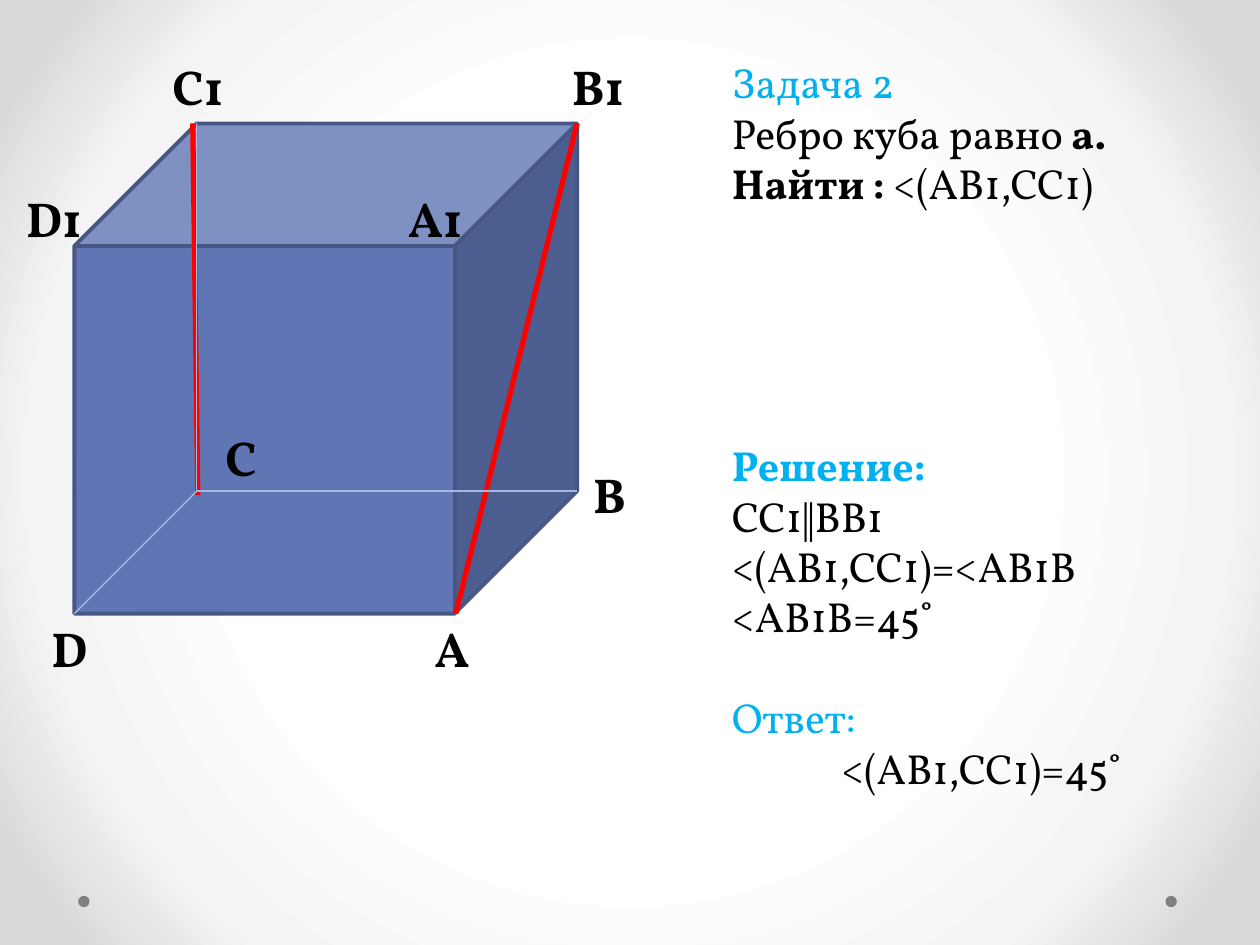
from dataclasses import dataclass

from lxml import etree
from pptx import Presentation
from pptx.dml.color import RGBColor
from pptx.enum import shapes, text
from pptx.oxml import ns
from pptx.util import Inches, Pt


@dataclass(frozen=True)
class Theme:
    font: str = "Vollkorn"
    label: int = 28
    body: int = 24
    ink: str = "000000"
    heading: str = "00B0F0"
    cube: str = "6076B4"
    edge: str = "475785"
    hidden: str = "A0BAE1"
    accent: str = "FF0000"
    dot: str = "808080"
    glow: tuple = ((50, "FFFFFF"), (76, "F4F4F4"), (92, "DADADA"))


T = Theme()


def add_xml(parent, tag, **attrs):
    return etree.SubElement(parent, ns.qn(tag), {k: str(v) for k, v in attrs.items()})


def paint_background(s):
    """Radial glow from the slide centre."""
    fill = s.background.fill
    fill.gradient()
    grad = s.background._cSld.find(".//" + ns.qn("a:gradFill"))
    for child in list(grad):
        grad.remove(child)
    stops = add_xml(grad, "a:gsLst")
    for pos, color in T.glow:
        add_xml(add_xml(stops, "a:gs", pos=pos * 1000), "a:srgbClr", val=color)
    centre = add_xml(grad, "a:path", path="circle")
    add_xml(centre, "a:fillToRect", **dict.fromkeys("ltrb", 50000))


def add_solid(s, kind, x, y, w, h, fill, edge=None):
    sp = s.shapes.add_shape(kind, Inches(x), Inches(y), Inches(w), Inches(h))
    sp.shadow.inherit = False
    sp.fill.solid()
    sp.fill.fore_color.rgb = RGBColor.from_string(fill)
    if edge:
        sp.line.color.rgb = RGBColor.from_string(edge)
        sp.line.width = Pt(2.25)
    else:
        sp.line.fill.background()


def add_line(s, start, end, color, width):
    ends = [Inches(v) for v in (*start, *end)]
    line = s.shapes.add_connector(shapes.MSO_CONNECTOR.STRAIGHT, *ends)
    line.line.color.rgb = RGBColor.from_string(color)
    line.line.width = Pt(width)
    add_xml(line._element.spPr, "a:effectLst")


def add_text(s, box, paragraphs, size):
    """Each paragraph is a list of (text, color, bold) runs."""
    sp = s.shapes.add_textbox(*(Inches(v) for v in box))
    tf = sp.text_frame
    tf.word_wrap = True
    tf.auto_size = text.MSO_AUTO_SIZE.SHAPE_TO_FIT_TEXT
    for i, runs in enumerate(paragraphs):
        p = tf.add_paragraph() if i else tf.paragraphs[0]
        for words, color, bold in runs:
            r = p.add_run()
            r.text = words
            for name, value in dict(name=T.font, size=Pt(size), bold=bold).items():
                setattr(r.font, name, value)
            r.font.color.rgb = RGBColor.from_string(color)
    return tf


def draw_cube(s, x, y, w, h):
    """Cube with vertex labels, hidden edges and the two lines in question."""
    depth = h / 4
    back_x, right, bottom = x + depth, x + w, y + h
    front_right, back_bottom = right - depth, bottom - depth
    back_corner = (back_x, back_bottom)

    add_solid(s, shapes.MSO_SHAPE.CUBE, x, y, w, h, T.cube, T.edge)

    low, mid, high = bottom - 0.01, y + 0.47, y - 0.58
    labels = {
        "A": (3.35, low, 0.55), "A1": (3.14, mid, 0.9),
        "B": (4.61, 3.64, 0.47), "B1": (4.44, high, 0.81),
        "C": (1.69, 3.34, 0.55), "C1": (1.27, high, 0.68),
        "D": (0.31, low, 0.55), "D1": (0.11, mid, 0.75),
    }
    for name, (left, top, width) in labels.items():
        add_text(s, (left, top, width, 0.57), [[(name, T.ink, True)]], T.label)

    add_line(s, (right, y), (front_right + 0.01, bottom), T.accent, 3)
    add_line(s, (1.53, y), (1.57, 3.93), T.accent, 3)
    for corner in ((back_x, y), (right, back_bottom), (x, bottom)):
        add_line(s, corner, back_corner, T.hidden, 0.75)


def write_problem(s, x, y, w, h):
    add_text(s, (x, y, w, h), [
        [("Задача 2", T.heading, False)],
        [("Ребро куба равно ", T.ink, False), ("а.", T.ink, True)],
        [("Найти :", T.ink, True), (" <(АВ1,СС1)", T.ink, False)],
    ], T.body)


def write_solution(s, x, y, w, h):
    steps = ("СС1‖ВВ1", "<(АВ1,СС1)=<АВ1В", "<АВ1В=45˚")
    tf = add_text(s, (x, y, w, h), [
        [("Решение:", T.heading, True)],
        *([(step, T.ink, False)] for step in steps),
        [("Ответ:", T.heading, False)],
        [("<(АВ1,СС1)=45˚", T.ink, False)],
    ], T.body)
    heading, answer = tf.paragraphs[-2:]
    heading.space_before = Pt(29)
    answer._p.get_or_add_pPr().set("marL", str(Inches(0.87)))


def main():
    prs = Presentation()
    prs.slide_width, prs.slide_height = Inches(10), Inches(7.5)
    s = prs.slides.add_slide(prs.slide_layouts[6])
    paint_background(s)
    for x in (0.62, 9.25):
        add_solid(s, shapes.MSO_SHAPE.OVAL, x, 7.11, 0.09, 0.09, T.dot)
    draw_cube(s, 0.59, 0.98, 3.99, 3.89)
    write_problem(s, 5.71, 0.4, 3.69, 1.31)
    write_solution(s, 5.71, 3.44, 3.86, 3.33)
    prs.save("out.pptx")


if __name__ == "__main__":
    main()
